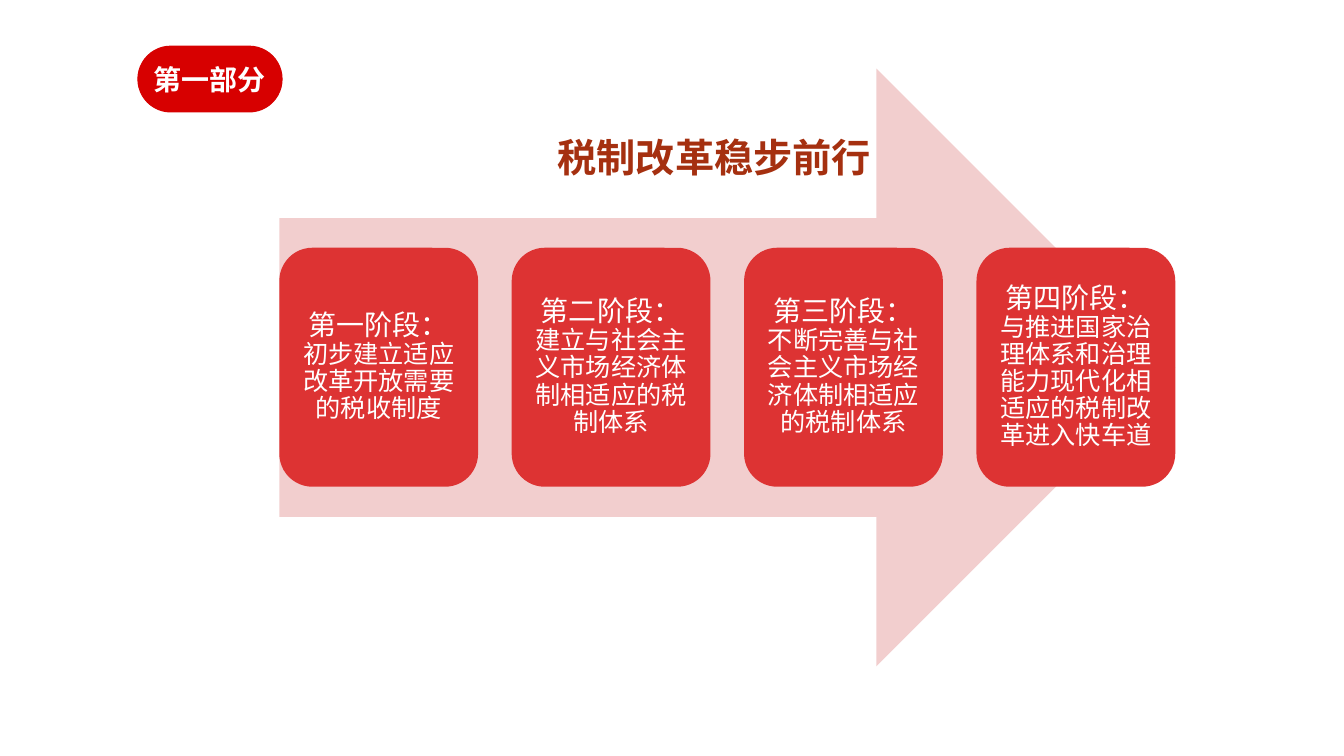
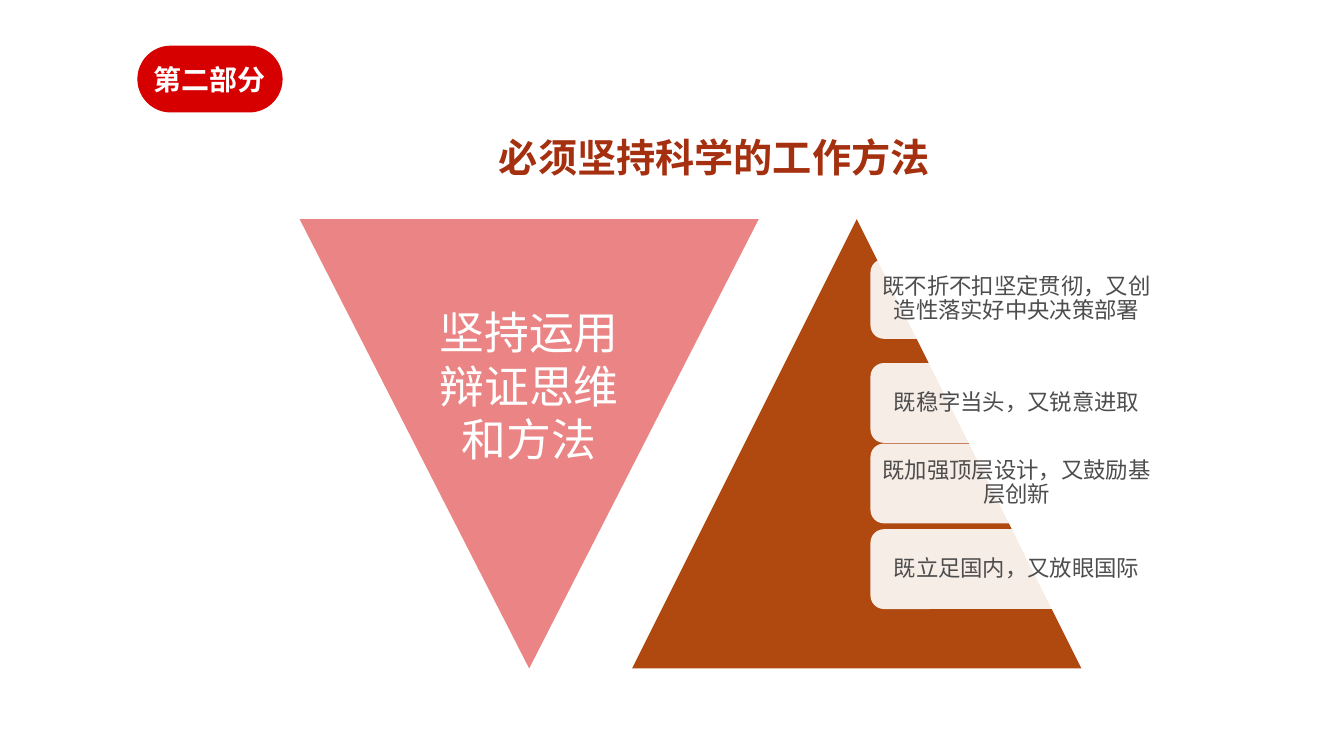
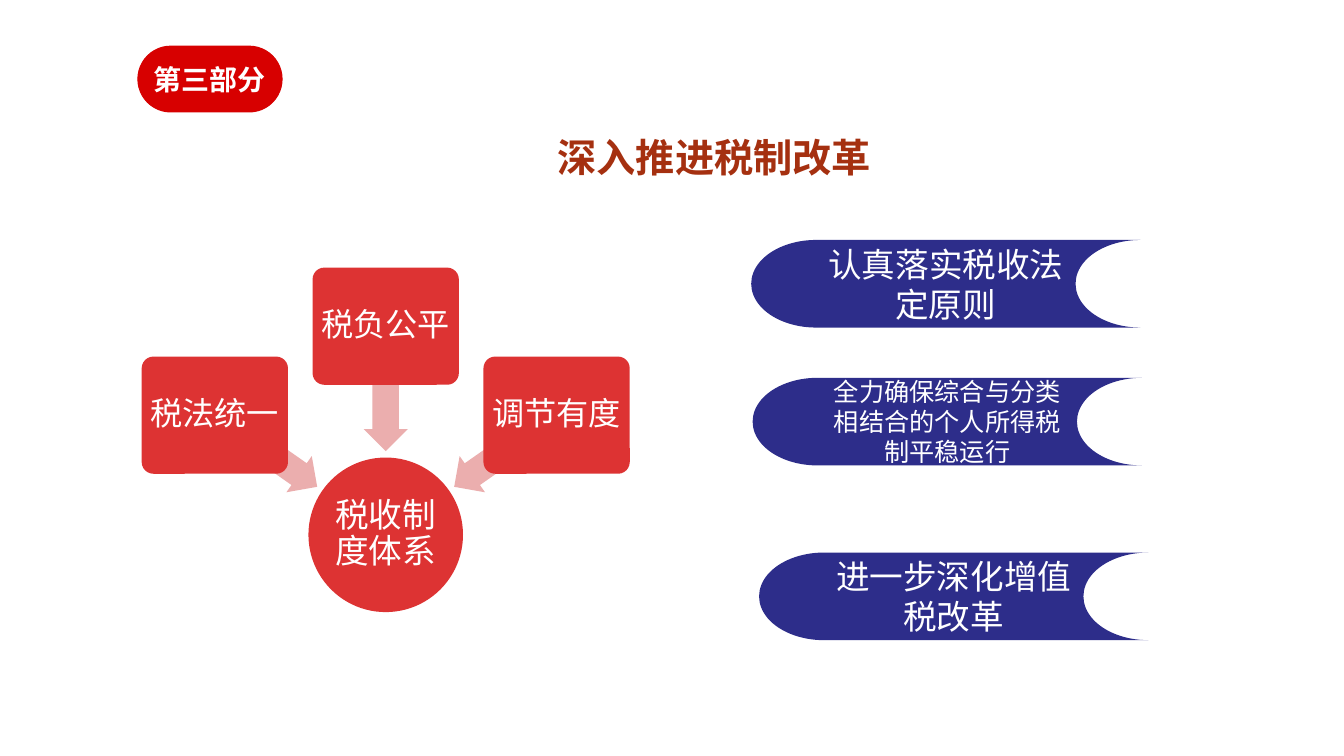
from math import cos, radians, sin

from lxml.etree import SubElement
from pptx import Presentation
from pptx.dml.color import RGBColor
from pptx.enum.shapes import MSO_SHAPE
from pptx.enum.text import MSO_ANCHOR, PP_ALIGN
from pptx.oxml.ns import qn
from pptx.util import Pt

# Shared style
HEAD_FONT, BODY_FONT = "Noto Sans CJK SC", "Arial"
WHITE, BADGE, TITLE = "FFFFFF", "D70000", "A53010"
RED, PALE_RED, PINK, ROSE = "DD3333", "F2CECE", "EBAEAE", "EB8585"
BROWN, NAVY, GREY = "B04910", "2D2D8A", "4D4D4D"

# Content
STAGES = [
    ("第一阶段：", "初步建立适应改革开放需要的税收制度"),
    ("第二阶段：", "建立与社会主义市场经济体制相适应的税制体系"),
    ("第三阶段：", "不断完善与社会主义市场经济体制相适应的税制体系"),
    ("第四阶段：", "与推进国家治理体系和治理能力现代化相适应的税制改革进入快车道"),
]
METHOD = "坚持运用辩证思维和方法"
PRINCIPLES = [  # top, text
    (185, "既不折不扣坚定贯彻，又创造性落实好中央决策部署"),
    (259.3, "既稳字当头，又锐意进取"),
    (316.8, "既加强顶层设计，又鼓励基层创新"),
    (378, "既立足国内，又放眼国际"),
]
SYSTEM = "税收制度体系"
GOALS = [(145, "税法统一"), (90, "税负公平"), (35, "调节有度")]  # angle, text
TASKS = [  # left, top, size, text
    (536.6, 171.4, 24, "认真落实税收法定原则"),
    (537.6, 269.9, 18, "全力确保综合与分类相结合的个人所得税制平稳运行"),
    (542.2, 394.7, 24, "进一步深化增值税改革"),
]


def rgb(color):
    return RGBColor.from_string(color)


def add_block(s, kind, left, top, width, height, fill, adj=()):
    sp = s.shapes.add_shape(kind, Pt(left), Pt(top), Pt(width), Pt(height))
    sp.shadow.inherit = False
    sp.fill.solid()
    sp.fill.fore_color.rgb = rgb(fill)
    sp.line.fill.background()
    for i, value in enumerate(adj):
        sp.adjustments[i] = value
    return sp


def write(sp, runs, color=WHITE, font=BODY_FONT, bold=False, spacing=None,
          insets=(7.2, 3.6), anchor=MSO_ANCHOR.MIDDLE, wrap=True):
    """Fill one centred paragraph with (text, size, font) or (text, size) runs."""
    tf = sp.text_frame
    tf.word_wrap = wrap
    tf.vertical_anchor = anchor
    tf.margin_left = tf.margin_right = Pt(insets[0])
    tf.margin_top = tf.margin_bottom = Pt(insets[1])
    p = tf.paragraphs[0]
    p.alignment = PP_ALIGN.CENTER
    p.line_spacing = spacing
    p.font.color.rgb = rgb(color)
    p.font.bold = bold
    for text, size, *own_font in runs:
        r = p.add_run()
        r.text = text
        r.font.size = Pt(size)
        r.font.name = own_font[0] if own_font else font


def set_opacity(sp, percent):
    color = sp.fill._xPr.find(qn("a:solidFill"))[0]
    SubElement(color, qn("a:alpha")).set("val", str(percent * 1000))


def add_section(prs, part, title):
    s = prs.slides.add_slide(prs.slide_layouts[6])
    badge = add_block(s, MSO_SHAPE.ROUNDED_RECTANGLE, 98.5, 33, 103, 47, BADGE, [0.5])
    badge.line.color.rgb = rgb(BADGE)
    badge.line.width = Pt(0.75)
    write(badge, [(part, 20)], font=HEAD_FONT, bold=True, insets=(0, 0))
    box = s.shapes.add_textbox(Pt(163.5), Pt(91.4), Pt(693.4), Pt(41))
    write(box, [(title, 28)], TITLE, HEAD_FONT, True, anchor=MSO_ANCHOR.TOP, wrap=False)
    return s


def build_stages(prs):
    s = add_section(prs, "第一部分", "税制改革稳步前行")
    left, width, card_w = 199.5, 640, 142
    add_block(s, MSO_SHAPE.RIGHT_ARROW, left, 49, width, 427, PALE_RED)
    pitch = (width - card_w) / (len(STAGES) - 1)
    for i, (name, text) in enumerate(STAGES):
        card = add_block(s, MSO_SHAPE.ROUNDED_RECTANGLE, left + i * pitch, 177,
                         card_w, 170.7, RED)
        write(card, [(name, 20, HEAD_FONT), (text, 18)], spacing=0.9, insets=(5.8, 5.8))


def build_methods(prs):
    s = add_section(prs, "第二部分", "必须坚持科学的工作方法")
    add_block(s, MSO_SHAPE.ISOSCELES_TRIANGLE, 451.5, 156.5, 321, 321, BROWN)
    for top, text in PRINCIPLES:
        pill = add_block(s, MSO_SHAPE.ROUNDED_RECTANGLE, 621.8, top, 208.8, 57, WHITE)
        set_opacity(pill, 90)
        write(pill, [(text, 16)], GREY, spacing=0.9, insets=(5, 5))
    method = add_block(s, MSO_SHAPE.FLOWCHART_MERGE, 214, 156.5, 328, 321, ROSE)
    write(method, [(METHOD, 32)], anchor=MSO_ANCHOR.TOP)
    method.text_frame.margin_top = Pt(61)


def build_reform(prs):
    s = add_section(prs, "第三部分", "深入推进税制改革")
    cx, cy, diameter = 275.5, 382, 110.4
    hub = add_block(s, MSO_SHAPE.OVAL, cx - diameter / 2, cy - diameter / 2,
                    diameter, diameter, RED)
    write(hub, [(SYSTEM, 24)], spacing=0.9, insets=(1.4, 1.4))

    def add_on_ray(kind, angle, radius, width, height, fill, adj):
        x = cx + radius * cos(radians(angle))
        y = cy - radius * sin(radians(angle))
        return add_block(s, kind, x - width / 2, y - height / 2, width, height, fill, adj)

    # Goals fan out around the hub, each with an arrow pointing inwards
    for angle, text in GOALS:
        arrow = add_on_ray(MSO_SHAPE.LEFT_ARROW, angle, 104, 88.5, 31.6, PINK, [0.6, 0.5])
        arrow.rotation = 360 - angle
        goal = add_on_ray(MSO_SHAPE.ROUNDED_RECTANGLE, angle, 149, 104.5, 83.7, RED, [0.1])
        write(goal, [(text, 23)], spacing=0.9, insets=(3, 3))

    for left, top, size, text in TASKS:
        task = add_block(s, MSO_SHAPE.FLOWCHART_STORED_DATA, left, top, 278, 62.6, NAVY)
        write(task, [(text, size)])


def main():
    prs = Presentation()
    prs.slide_width, prs.slide_height = Pt(960), Pt(540)
    build_stages(prs)
    build_methods(prs)
    build_reform(prs)
    prs.save("out.pptx")


if __name__ == "__main__":
    main()
